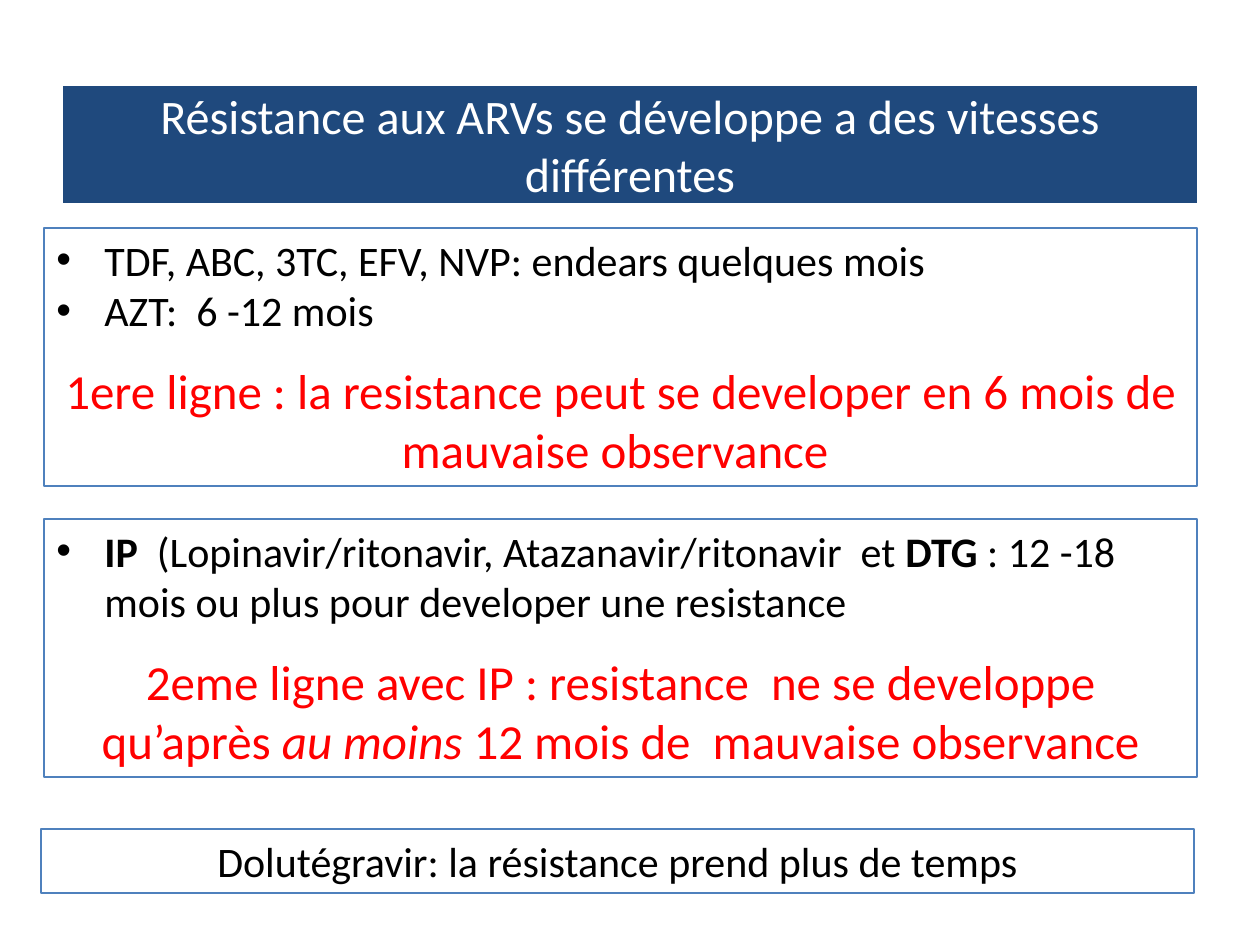
from lxml.etree import SubElement
from pptx import Presentation
from pptx.dml.color import RGBColor
from pptx.enum.shapes import MSO_SHAPE
from pptx.enum.text import MSO_ANCHOR, MSO_AUTO_SIZE, PP_ALIGN
from pptx.oxml.ns import qn
from pptx.util import Emu, Pt

PX = 914400 / 126
NAVY = RGBColor(0x1F, 0x49, 0x7D)
BLUE = RGBColor(0x4F, 0x81, 0xBD)
RED = RGBColor(0xFF, 0x00, 0x00)
BLACK = RGBColor(0x00, 0x00, 0x00)
WHITE = RGBColor(0xFF, 0xFF, 0xFF)
FONT = "Calibri"


def px(n):
    return Emu(round(n * PX))


def write(p, text, size=24, color=BLACK, align=PP_ALIGN.CENTER, bullet=False, before=0):
    """Fill a paragraph; text is a string or a list of (text, style), style "", "b" or "i"."""
    p.alignment = align
    p.space_before = Pt(before)
    if bullet:
        pPr = p._p.get_or_add_pPr()
        pPr.set("marL", str(px(48)))
        pPr.set("indent", str(-px(48)))
        SubElement(pPr, qn("a:buFont")).set("typeface", "Arial")
        SubElement(pPr, qn("a:buChar")).set("char", "•")
    for part, style in [(text, "")] if isinstance(text, str) else text:
        r = p.add_run()
        r.text = part
        r.font.name = FONT
        r.font.size = Pt(size)
        r.font.color.rgb = color
        r.font.bold = style == "b"
        r.font.italic = style == "i"


prs = Presentation()
prs.slide_width, prs.slide_height = px(1260), px(945)
s = prs.slides.add_slide(prs.slide_layouts[5])

title = s.shapes.title
title.left, title.top, title.width, title.height = px(63), px(86), px(1134), px(117)
title.fill.solid()
title.fill.fore_color.rgb = NAVY
tf = title.text_frame
tf.auto_size = MSO_AUTO_SIZE.NONE
tf.vertical_anchor = MSO_ANCHOR.MIDDLE
write(tf.paragraphs[0], "Résistance aux ARVs se développe a des vitesses différentes",
      size=27.5, color=WHITE)

item = dict(align=PP_ALIGN.LEFT, bullet=True)
message = dict(size=28, color=RED, before=14.6)
boxes = [
    (44, 228, 258, [
        ("TDF, ABC, 3TC, EFV, NVP: endears quelques mois", item),
        ("AZT:  6 -12 mois", item),
        ("1ere ligne : la resistance peut se developer en 6 mois de mauvaise observance ",
         message),
    ]),
    (44, 519, 258, [
        ([("IP  ", "b"), ("(Lopinavir/ritonavir, Atazanavir/ritonavir  et ", ""),
          ("DTG ", "b"), (": 12 -18 mois ou plus pour developer une resistance", "")], item),
        ([("2eme ligne avec IP : resistance  ne se developpe qu’après ", ""),
          ("au moins ", "i"), ("12 mois de  mauvaise observance", "")], message),
    ]),
    (41, 829, 64, [("Dolutégravir: la résistance prend plus de temps", {})]),
]

for left, top, height, paragraphs in boxes:
    sp = s.shapes.add_shape(MSO_SHAPE.RECTANGLE, px(left), px(top), px(1153), px(height))
    sp.shadow.inherit = False
    sp.fill.background()
    sp.line.color.rgb = BLUE
    sp.line.width = Pt(0.75)
    tf = sp.text_frame
    tf.word_wrap = True
    tf.vertical_anchor = MSO_ANCHOR.TOP
    for i, (text, style) in enumerate(paragraphs):
        p = tf.add_paragraph() if i else tf.paragraphs[0]
        write(p, text, **style)

prs.save("out.pptx")
